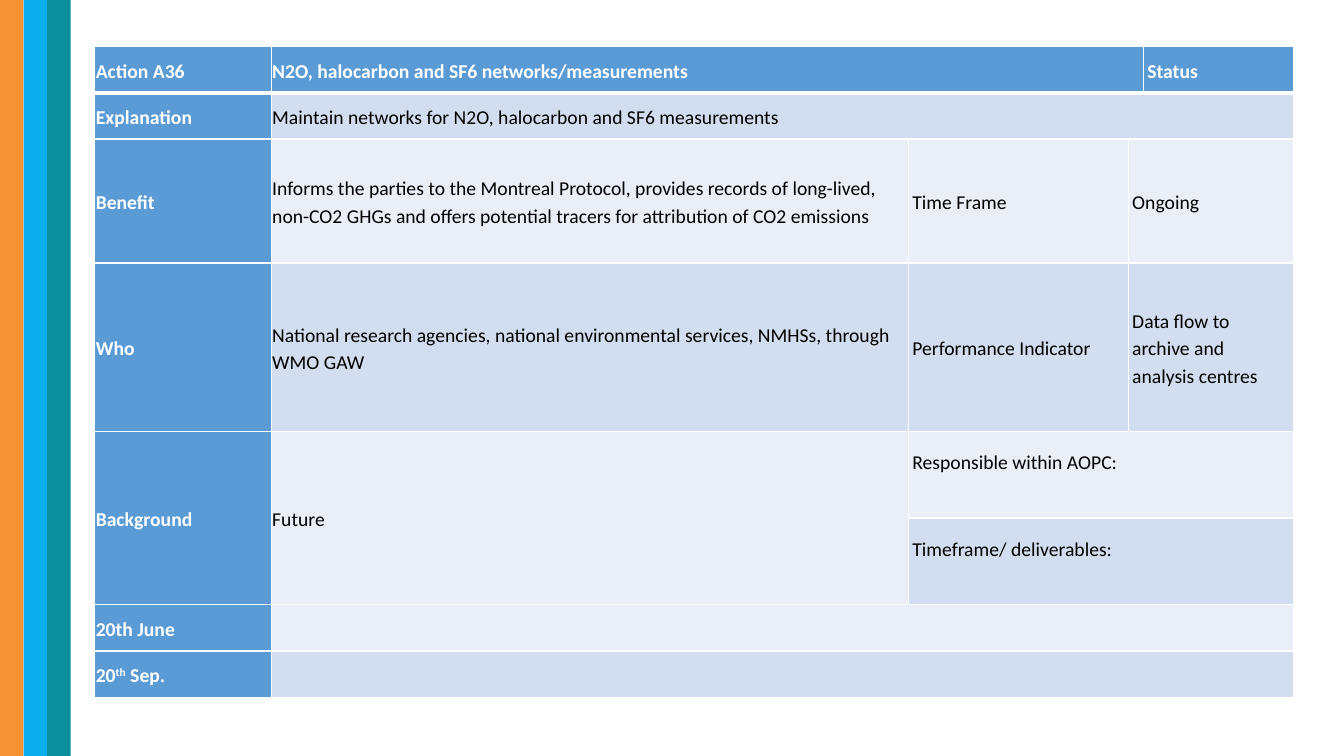
import dataclasses
import typing

import lxml.etree
import pptx
import pptx.dml.color
import pptx.enum.shapes
import pptx.enum.text
import pptx.oxml.ns
import pptx.util

RGB = pptx.dml.color.RGBColor
Inches = pptx.util.Inches

ORANGE = RGB(0xF4, 0x92, 0x34)
SKY = RGB(0x0C, 0xAD, 0xEA)
TEAL = RGB(0x0A, 0x8F, 0x9D)
BLUE = RGB(0x5B, 0x9B, 0xD5)
MIST = RGB(0xD2, 0xDE, 0xEF)
PALE = RGB(0xEA, 0xEF, 0xF7)
WHITE = RGB(0xFF, 0xFF, 0xFF)
BLACK = RGB(0, 0, 0)

WIDE, HIGH = 13.33, 7.5
STRIPES = (ORANGE, SKY, TEAL)
STRIPE = 0.7 / len(STRIPES)
LEFT, TOP = 0.94, 0.46
COLS = (1.75, 6.32, 2.18, 0.15, 1.49)
ROWS = (0.46, 0.46, 1.23, 1.67, 0.86, 0.86, 0.46, 0.46)

TIGHT = {side: Inches(0.01) for side in
         ("margin_left", "margin_right", "margin_top", "margin_bottom")}
LOOSE = {"margin_left": Inches(0.04), "margin_right": Inches(0.04),
         "margin_top": Inches(0.02), "margin_bottom": Inches(0.02)}
RAISED = LOOSE | {"margin_bottom": Inches(0.29)}


@dataclasses.dataclass(frozen=True)
class Entry:
    row: int
    col: int
    text: str = ""
    down: int = 1
    across: int = 1
    pad: typing.Mapping[str, int] = dataclasses.field(default_factory=lambda: TIGHT)


ENTRIES = (
    Entry(0, 0, "Action A36"),
    Entry(0, 1, "N2O, halocarbon and SF6 networks/measurements", across=3),
    Entry(0, 4, "Status", pad=LOOSE),
    Entry(1, 0, "Explanation"),
    Entry(1, 1, "Maintain networks for N2O, halocarbon and SF6 measurements", across=4),
    Entry(2, 0, "Benefit"),
    Entry(2, 1, "Informs the parties to the Montreal Protocol, provides records of "
          "long-lived, non-CO2 GHGs and offers potential tracers for attribution "
          "of CO2 emissions"),
    Entry(2, 2, "Time Frame", pad=LOOSE),
    Entry(2, 3, "Ongoing", across=2, pad=LOOSE),
    Entry(3, 0, "Who"),
    Entry(3, 1, "National research agencies, national environmental services, "
          "NMHSs, through WMO GAW"),
    Entry(3, 2, "Performance Indicator", pad=LOOSE),
    Entry(3, 3, "Data flow to archive and analysis centres", across=2, pad=LOOSE),
    Entry(4, 0, "Background", down=2),
    Entry(4, 1, "Future", down=2),
    Entry(4, 2, "Responsible within AOPC:", across=3, pad=RAISED),
    Entry(5, 2, "Timeframe/ deliverables:", across=3, pad=RAISED),
    Entry(6, 0, "20th June"),
    Entry(6, 1, across=4),
    Entry(7, 0, "20^th^ Sep."),
    Entry(7, 1, across=4),
)


def apply(item: typing.Any, values: typing.Mapping[str, typing.Any]) -> None:
    for name, value in values.items():
        setattr(item, name, value)


def draw_stripe(slide: typing.Any, place: int, color: RGB) -> None:
    stripe = slide.shapes.add_shape(
        pptx.enum.shapes.MSO_SHAPE.RECTANGLE,
        Inches(place * STRIPE), 0, Inches(STRIPE), Inches(HIGH))
    stripe.shadow.inherit = False
    stripe.fill.solid()
    stripe.fill.fore_color.rgb = color
    stripe.line.fill.background()


def add_edges(cell: typing.Any, row: int) -> None:
    """Rule the cell in white, with a thick line under the header row."""
    thick = {(0, "B"), (1, "T")}
    props = cell._tc.get_or_add_tcPr()
    qn = pptx.oxml.ns.qn
    for side in "LRTB":
        width = pptx.util.Pt(3 if (row, side) in thick else 1)
        edge = lxml.etree.SubElement(props, qn(f"a:ln{side}"), w=str(int(width)))
        fill = lxml.etree.SubElement(edge, qn("a:solidFill"))
        lxml.etree.SubElement(fill, qn("a:srgbClr"), val=str(WHITE))


def write_text(cell: typing.Any, text: str, head: bool) -> None:
    """Write one paragraph; text between carets is raised."""
    para = cell.text_frame.paragraphs[0]
    para.line_spacing = 1.15
    for place, part in enumerate(text.split("^")):
        run = para.add_run()
        run.text = part
        apply(run.font, {"name": "Calibri", "size": pptx.util.Pt(14), "bold": head})
        run.font.color.rgb = WHITE if head else BLACK
        if place % 2:
            run._r.get_or_add_rPr().set("baseline", "30000")


def draw_table(slide: typing.Any) -> None:
    table = slide.shapes.add_table(
        len(ROWS), len(COLS), Inches(LEFT), Inches(TOP),
        Inches(sum(COLS)), Inches(sum(ROWS))).table
    apply(table, {"first_row": False, "horz_banding": False})
    for col, width in zip(table.columns, COLS):
        col.width = Inches(width)
    for row, height in zip(table.rows, ROWS):
        row.height = Inches(height)
    for row in range(len(ROWS)):
        for col in range(len(COLS)):
            cell = table.cell(row, col)
            add_edges(cell, row)
            cell.fill.solid()
            band = MIST if row % 2 else PALE
            cell.fill.fore_color.rgb = BLUE if row == 0 or col == 0 else band
    for entry in ENTRIES:
        cell = table.cell(entry.row, entry.col)
        if entry.down * entry.across > 1:
            cell.merge(table.cell(entry.row + entry.down - 1,
                                  entry.col + entry.across - 1))
        apply(cell, entry.pad)
        cell.vertical_anchor = pptx.enum.text.MSO_ANCHOR.MIDDLE
        if entry.text:
            write_text(cell, entry.text, entry.row == 0 or entry.col == 0)


def main() -> None:
    deck = pptx.Presentation()
    apply(deck, {"slide_width": Inches(WIDE), "slide_height": Inches(HIGH)})
    slide = deck.slides.add_slide(deck.slide_layouts[6])
    for place, color in enumerate(STRIPES):
        draw_stripe(slide, place, color)
    draw_table(slide)
    deck.save("out.pptx")


if __name__ == "__main__":
    main()
